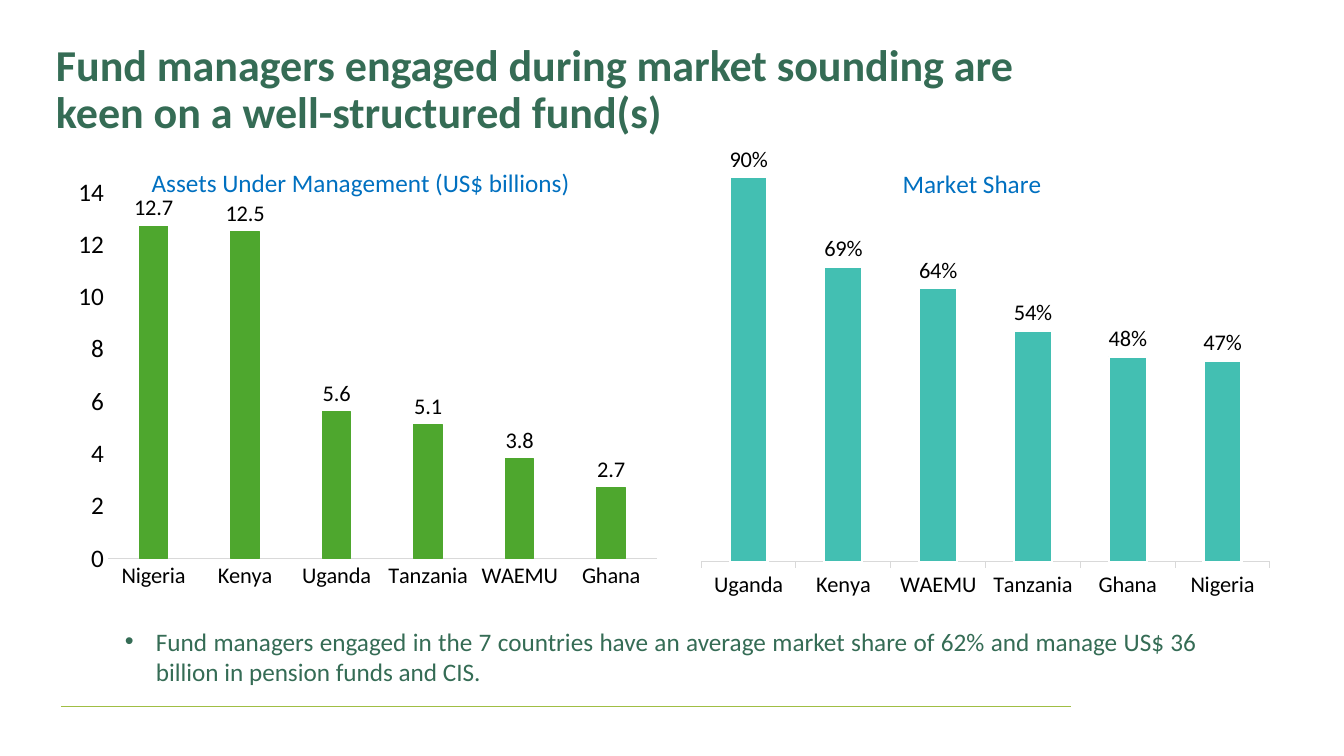
from lxml.etree import SubElement
from pptx import Presentation
from pptx.chart.data import CategoryChartData
from pptx.dml.color import RGBColor
from pptx.enum.chart import XL_CHART_TYPE, XL_LABEL_POSITION, XL_TICK_MARK
from pptx.enum.shapes import MSO_CONNECTOR, MSO_SHAPE
from pptx.enum.text import MSO_ANCHOR, PP_ALIGN
from pptx.oxml import parse_xml
from pptx.oxml.ns import nsdecls, qn
from pptx.util import Emu, Pt

# Content
FONT = "Calibri"
GREEN, BLUE, BLACK, GREY, WHITE = "356C55", "0070C0", "000000", "D9D9D9", "FFFFFF"
TITLE = "Fund managers engaged during market sounding are keen on a well-structured fund(s)"
NOTE = ("Fund managers engaged in the 7 countries have an average market share "
        "of 62% and manage US$ 36 billion in pension funds and CIS.")

# Boxes are left, top, width, height in px; plot and head are relative to box
CHARTS = [
    dict(title="Market Share", box=(685, 125, 600, 488),
         plot=(16, 10, 569, 427), head=(213, 37),
         data={"Uganda": 0.9, "Kenya": 0.69, "WAEMU": 0.64,
               "Tanzania": 0.54, "Ghana": 0.48, "Nigeria": 0.47},
         fill="15AF9F", alpha=80, line=WHITE, width=1.5, gap=150, lap=0,
         form="0%", top=1, step=0.2, axis=False, tick=XL_TICK_MARK.OUTSIDE),
    dict(title="Assets Under Management (US$ billions)", box=(50, 146, 622, 467),
         plot=(58, 46, 549, 366), head=(97, 15),
         data={"Nigeria": 12.7, "Kenya": 12.5, "Uganda": 5.6,
               "Tanzania": 5.1, "WAEMU": 3.8, "Ghana": 2.7},
         fill="4EA72E", alpha=100, line="4EA72E", width=0.75, gap=219, lap=-27,
         form="0.0", top=14, step=2, axis=True, tick=XL_TICK_MARK.NONE),
]


def px(n):
    return Emu(round(n * 914400 / 100.8))


def rgb(code):
    return RGBColor.from_string(code)


def style(font, size, color, bold=False):
    font.name, font.size, font.bold = FONT, Pt(size), bold
    font.color.rgb = rgb(color)


def place(node, box, rect, inner=False):
    """Give a plot area or chart title a fixed place."""
    for old in node.findall(qn("c:layout")):
        node.remove(old)
    keys = ["x", "y", "w", "h"][:len(rect)]
    tags = [("layoutTarget", "inner")] if inner else []
    tags += [(k + "Mode", "edge") for k in keys[:2]]
    tags += [(k, round(v / box[2 + i % 2], 3))
             for i, (k, v) in enumerate(zip(keys, rect))]
    body = "".join(f'<c:{t} val="{v}"/>' for t, v in tags)
    lay = parse_xml(f'<c:layout {nsdecls("c")}><c:manualLayout>{body}'
                    '</c:manualLayout></c:layout>')
    text = node.find(qn("c:tx"))
    node.insert(0 if text is None else 1, lay)


def draw(slide, c):
    data = CategoryChartData()
    data.categories = list(c["data"])
    data.add_series("Series 1", list(c["data"].values()))
    frame = slide.shapes.add_chart(
        XL_CHART_TYPE.COLUMN_CLUSTERED, *map(px, c["box"]), data)
    chart = frame.chart
    chart.has_legend = False
    style(chart.font, 18, BLACK)

    # Chart title
    head = chart.chart_title
    head.text_frame.text = c["title"]
    style(head.text_frame.paragraphs[0].runs[0].font, 18, BLUE)
    root = chart.element.find(qn("c:chart"))
    node = root.find(qn("c:title"))
    place(node, c["box"], c["head"])
    node.find(qn("c:overlay")).set("val", "1")
    place(root.find(qn("c:plotArea")), c["box"], c["plot"], True)

    # Axes
    cat, val = chart.category_axis, chart.value_axis
    cat.major_tick_mark = c["tick"]
    cat.format.line.color.rgb = rgb(GREY)
    cat.format.line.width = Pt(0.75)
    style(cat.tick_labels.font, 16, BLACK)
    val.has_major_gridlines = False
    val.major_tick_mark = XL_TICK_MARK.NONE
    val.minimum_scale, val.maximum_scale, val.major_unit = 0, c["top"], c["step"]
    val.format.line.fill.background()
    style(val.tick_labels.font, 18, BLACK)
    val.visible = c["axis"]

    # Columns
    plot = chart.plots[0]
    plot.vary_by_categories = False
    plot.gap_width, plot.overlap = c["gap"], c["lap"]
    bars = plot.series[0].format
    bars.fill.solid()
    bars.fill.fore_color.rgb = rgb(c["fill"])
    if c["alpha"] < 100:
        tint = next(plot.series[0]._element.iter(qn("a:srgbClr")))
        SubElement(tint, qn("a:alpha")).set("val", str(c["alpha"] * 1000))
    bars.line.color.rgb = rgb(c["line"])
    bars.line.width = Pt(c["width"])

    # Value labels
    tags = plot.series[0].data_labels
    tags.show_value = True
    tags.position = XL_LABEL_POSITION.OUTSIDE_END
    tags.number_format, tags.number_format_is_linked = c["form"], False
    style(tags.font, 16, BLACK)


deck = Presentation()
deck.slide_width, deck.slide_height = px(1344), px(756)
slide = deck.slides.add_slide(deck.slide_layouts[6])

# Footer rule
rule = slide.shapes.add_connector(
    MSO_CONNECTOR.STRAIGHT, px(61), px(706), px(1071), px(706))
rule.line.fill.solid()
rule.line.fill.fore_color.rgb = rgb("A0BE44")
rule.line.width = Pt(0.6)
SubElement(rule._element.spPr, qn("a:effectLst"))

# Slide title
text = slide.shapes.add_textbox(px(56), px(43), px(1042), px(74)).text_frame
text.word_wrap = True
text.margin_left = text.margin_right = text.margin_top = text.margin_bottom = 0
text.text = TITLE
para = text.paragraphs[0]
para.line_spacing = 0.9
style(para.runs[0].font, 31.5, GREEN, True)

# Bullet note
note = slide.shapes.add_shape(
    MSO_SHAPE.RECTANGLE, px(115), px(621), px(1092), px(72))
note.shadow.inherit = False
note.fill.solid()
note.fill.fore_color.rgb = rgb(WHITE)
note.line.fill.background()
text = note.text_frame
text.word_wrap = True
text.vertical_anchor = MSO_ANCHOR.TOP
text.text = NOTE
para = text.paragraphs[0]
para.alignment = PP_ALIGN.JUSTIFY
props = para._p.get_or_add_pPr()
props.set("marL", str(px(31)))
props.set("indent", str(-px(31)))
SubElement(props, qn("a:buFont")).set("typeface", "Arial")
SubElement(props, qn("a:buChar")).set("char", "•")
style(para.runs[0].font, 18, GREEN)

# Charts
for item in CHARTS:
    draw(slide, item)

deck.save("out.pptx")
